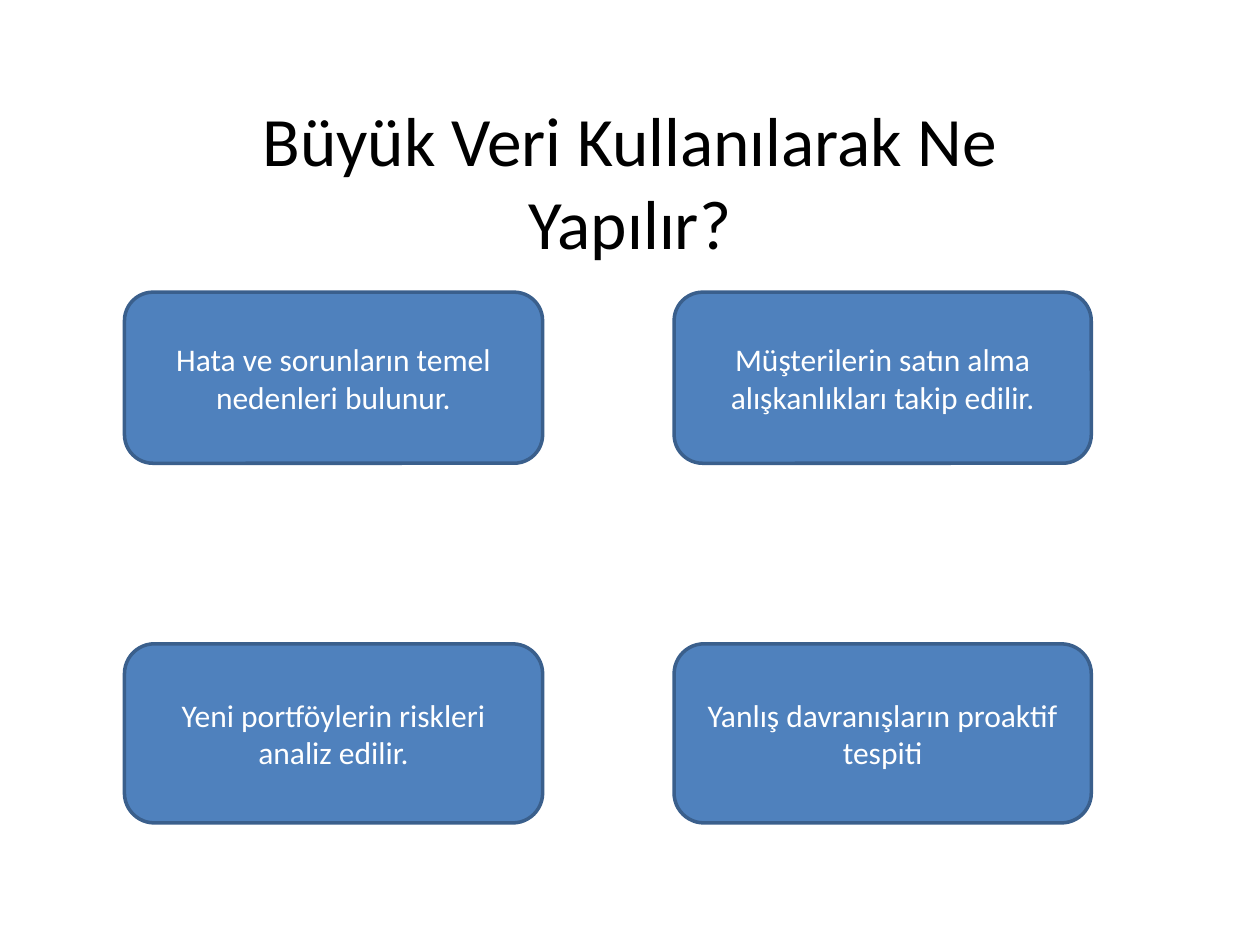
import pptx
import pptx.dml.color
import pptx.enum.shapes
import pptx.enum.text
import pptx.util
from pptx.util import Cm, Pt

# Content
heading = "Büyük Veri Kullanılarak Ne Yapılır?"
uses = [
    ["Hata ve sorunların temel nedenleri bulunur.",
     "Müşterilerin satın alma alışkanlıkları takip edilir."],
    ["Yeni portföylerin riskleri analiz edilir.",
     "Yanlış davranışların proaktif tespiti"],
]

# Layout in centimetres: (start, size) of each column and row
columns = [(2.51, 8.43), (13.59, 8.41)]
rows = [(5.89, 3.45), (12.98, 3.61)]


def colour(value):
    return pptx.dml.color.RGBColor.from_string(value)


def write(frame, text, size, text_colour):
    frame.text = text
    frame.word_wrap = True
    frame.auto_size = pptx.enum.text.MSO_AUTO_SIZE.NONE
    frame.vertical_anchor = pptx.enum.text.MSO_ANCHOR.MIDDLE
    paragraph = frame.paragraphs[0]
    paragraph.alignment = pptx.enum.text.PP_ALIGN.CENTER
    paragraph.font.name = "Calibri"
    paragraph.font.size = Pt(size)
    paragraph.font.color.rgb = colour(text_colour)


def add_use(slide, text, column, row):
    left, width = column
    top, height = row
    card = slide.shapes.add_shape(
        pptx.enum.shapes.MSO_SHAPE.ROUNDED_RECTANGLE,
        Cm(left), Cm(top), Cm(width), Cm(height))
    card.shadow.inherit = False
    card.fill.solid()
    card.fill.fore_color.rgb = colour("4F81BD")
    card.line.color.rgb = colour("3A5F8C")
    card.line.width = Pt(2)
    write(card.text_frame, text, 18, "FFFFFF")


def main():
    deck = pptx.Presentation()
    deck.slide_width, deck.slide_height = Cm(25.4), Cm(19.05)
    slide = deck.slides.add_slide(deck.slide_layouts[5])

    # Title
    title = slide.shapes.title
    title.left, title.top = Cm(4.42), Cm(2.79)
    title.width, title.height = Cm(16.56), Cm(1.45)
    write(title.text_frame, heading, 39.6, "000000")
    title.text_frame.margin_top = Cm(0.25)
    title.text_frame.margin_bottom = 0

    # Grid of uses
    for row, texts in zip(rows, uses):
        for column, text in zip(columns, texts):
            add_use(slide, text, column, row)

    deck.save("out.pptx")


if __name__ == "__main__":
    main()
